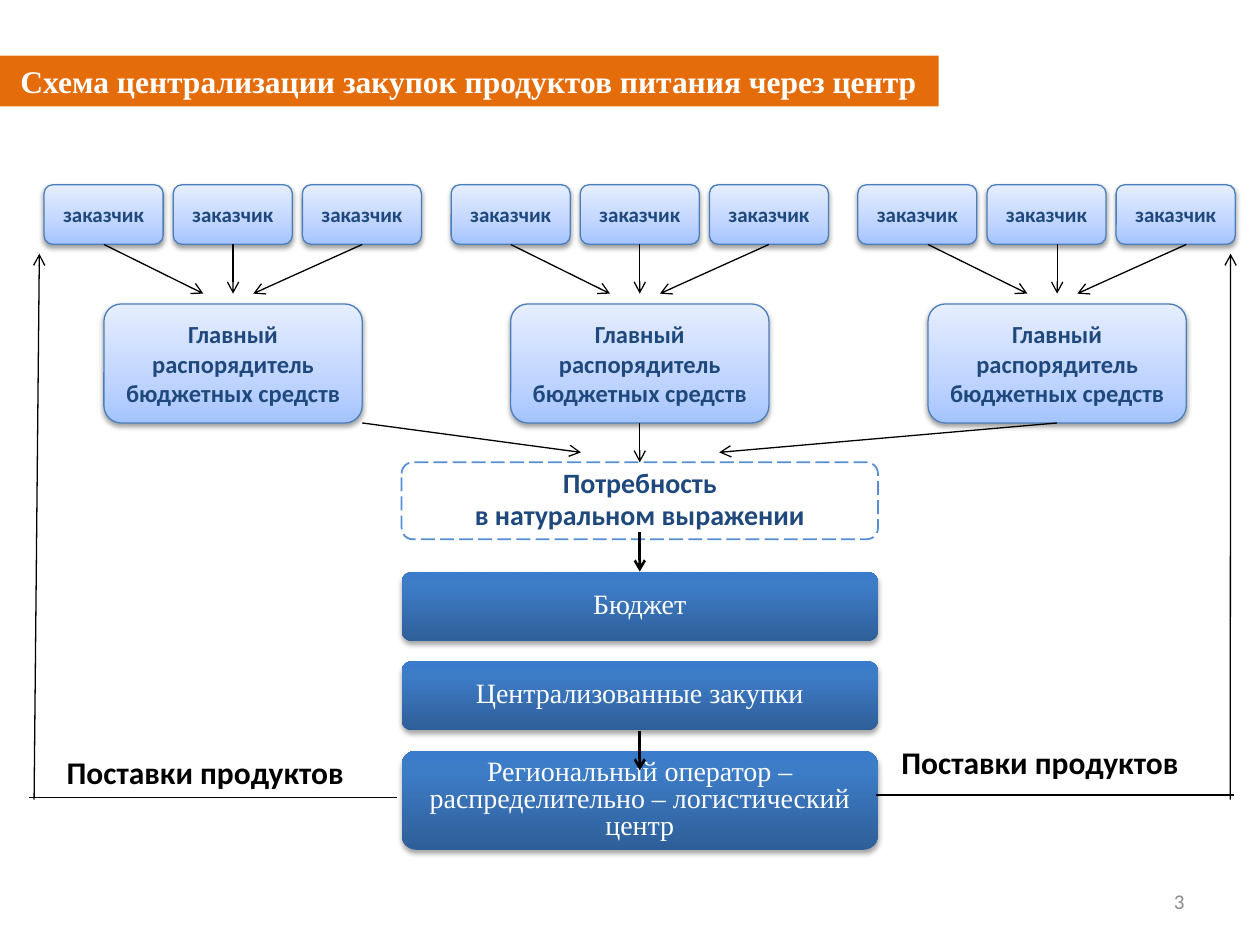
from lxml import etree
from pptx import Presentation
from pptx.dml.color import RGBColor
from pptx.enum.dml import MSO_LINE
from pptx.enum.shapes import MSO_CONNECTOR, MSO_SHAPE
from pptx.enum.text import MSO_ANCHOR, PP_ALIGN
from pptx.oxml import parse_xml
from pptx.oxml.ns import nsdecls, qn
from pptx.util import Pt

LINE, ROUND, RECT = MSO_CONNECTOR.STRAIGHT, MSO_SHAPE.ROUNDED_RECTANGLE, MSO_SHAPE.RECTANGLE
DASH = MSO_LINE.LONG_DASH
TOP, MIDDLE = MSO_ANCHOR.TOP, MSO_ANCHOR.MIDDLE
LEFT, CENTER, RIGHT = PP_ALIGN.LEFT, PP_ALIGN.CENTER, PP_ALIGN.RIGHT

COLORS = {
    "black": "000000", "white": "FFFFFF", "navy": "1F497D", "orange": "E46C0A",
    "edge": "4B7EBC", "dash": "558ED5", "gray": "8C8C8C",
}
# Stops run from the bottom edge to the top: (percent, colour)
PALE = [(0, "A4C4FF"), (35, "BFD4FF"), (100, "E6EEFF")]
DEEP = [(0, "2F5F99"), (80, "3D7CC7"), (100, "3A7CCB")]

SMALL = {"size": 12, "name": "Calibri", "bold": True, "color": "navy"}
BODY = {**SMALL, "size": 14}
NEED = {**SMALL, "size": 16}
STEP = {"size": 16, "name": "Times New Roman", "bold": False, "color": "white"}
LABEL = {**SMALL, "size": 18, "color": "black"}
TITLE = {**STEP, "size": 18, "bold": True}
NUMBER = {**SMALL, "bold": False, "color": "gray"}


class Board:
    """Current slide together with the shared drawing style."""

    def __init__(self, slide):
        self.shapes = slide.shapes

    def color(self, name):
        return RGBColor.from_string(COLORS[name])

    def put_text(self, shape, text, font, align=CENTER, anchor=MIDDLE, **para):
        frame = shape.text_frame
        frame.word_wrap, frame.vertical_anchor = True, anchor
        for i, words in enumerate(text.split("\n")):
            line = frame.paragraphs[0] if i == 0 else frame.add_paragraph()
            for key, value in {"alignment": align, **para}.items():
                setattr(line, key, value)
            run = line.add_run()
            run.text = words
            for key, value in font.items():
                if key == "color":
                    run.font.color.rgb = self.color(value)
                else:
                    setattr(run.font, key, Pt(value) if key == "size" else value)

    def label(self, place, text, font, **style):
        self.put_text(self.shapes.add_textbox(*map(Pt, place)), text, font, **style)

    def blend(self, shape, stops):
        shape.fill.gradient()
        marks = "".join(
            f'<a:gs pos="{at * 1000}"><a:srgbClr val="{tone}"/></a:gs>' for at, tone in stops
        )
        props = shape.element.spPr
        props.replace(props.find(qn("a:gradFill")), parse_xml(
            f'<a:gradFill {nsdecls("a")} rotWithShape="1"><a:gsLst>{marks}</a:gsLst>'
            '<a:lin ang="16200000" scaled="0"/></a:gradFill>'))

    def shade(self, shape, alpha, drop):
        shape.element.spPr.find(qn("a:effectLst")).append(parse_xml(
            f'<a:outerShdw {nsdecls("a")} blurRad="{Pt(3.1)}" dist="{Pt(drop)}" '
            'dir="5400000" rotWithShape="0"><a:srgbClr val="000000">'
            f'<a:alpha val="{alpha * 1000}"/></a:srgbClr></a:outerShdw>'))

    def box(self, place, kind=ROUND, fill=None, edge=None, width=0.75):
        shape = self.shapes.add_shape(kind, *map(Pt, place))
        shape.shadow.inherit = False
        if kind == ROUND:
            shape.adjustments[0] = 0.145
        if fill:
            shape.fill.solid()
            shape.fill.fore_color.rgb = self.color(fill)
        else:
            shape.fill.background()
        if edge:
            shape.line.color.rgb = self.color(edge)
            shape.line.width = Pt(width)
        else:
            shape.line.fill.background()
        return shape

    def card(self, place, text, font):
        shape = self.box(place, edge="edge")
        self.blend(shape, PALE)
        self.shade(shape, 38, 1.6)
        self.put_text(shape, text, font, space_before=Pt(font["size"] * 0.2))

    def step(self, place, text):
        shape = self.box(place)
        self.blend(shape, DEEP)
        self.shade(shape, 35, 1.8)
        self.put_text(shape, text, STEP, line_spacing=0.8, space_before=Pt(3.2))

    def line(self, start, end, width=0.75, arrow=True):
        link = self.shapes.add_connector(LINE, *map(Pt, (*start, *end)))
        link.line.color.rgb = self.color("black")
        link.line.width = Pt(width)
        props = link.element.spPr
        if arrow:
            etree.SubElement(props.find(qn("a:ln")), qn("a:tailEnd"), type="arrow")
        etree.SubElement(props, qn("a:effectLst"))


def main():
    deck = Presentation()
    deck.slide_width, deck.slide_height = Pt(720), Pt(540)
    board = Board(deck.slides.add_slide(deck.slide_layouts[6]))

    mid, gap = 365.6, 73.8
    small, large = 68, 2 * gap
    # Centre of each trio of customers and of the manager below it
    for trio, boss in [(133, 133.2), (mid, mid), (598, 604.1)]:
        board.card((boss - large / 2, 173.7, large, 68), "Главный распорядитель бюджетных средств", BODY)
        for side, tip in [(-1, -17), (0, 0), (1, 11.5)]:
            board.card((trio + side * gap - small / 2, 105.6, small, 34), "заказчик", SMALL)
            board.line((boss + side * gap, 139.7), (boss + tip, 167.8))

    left, wide = 229.5, 272.2
    need = board.box((left, 264.2, wide, 44), edge="dash", width=1)
    need.line.dash_style = DASH
    board.put_text(need, "Потребность\nв натуральном выражении", NEED, anchor=TOP,
                   line_spacing=0.8, space_before=Pt(3.2))
    for top, high, text in [
        (327, 39.4, "Бюджет"),
        (378, 39.4, "Централизованные закупки"),
        (429, 56.6, "Региональный оператор – распределительно – логистический центр"),
    ]:
        board.step((left, top, wide, high), text)

    for x, y in [(508, 423.5), (31, 429)]:
        board.label((x, y, 187, 22.3), "Поставки продуктов", LABEL,
                    align=LEFT, anchor=TOP, line_spacing=0.9)

    for start, end in [
        ((207, 241.7), (332, 258.5)),
        ((mid, 241.7), (mid, 264.2)),
        ((604.1, 241.7), (411, 258.5)),
        ((19.5, 457), (22.5, 145)),
        ((703, 457), (703.2, 145)),
    ]:
        board.line(start, end)
    for top in (304, 417.6):
        board.line((mid, top), (mid, top + 22.6), width=1.5)
    for start, end in [((16.8, 455.7), (227, 455.7)), ((500.5, 454.3), (705, 454.3))]:
        board.line(start, end, arrow=False)

    head = board.box((0, 31.8, 536.4, 29), kind=RECT, fill="orange")
    head.text_frame.margin_left, head.text_frame.margin_right = Pt(11.7), 0
    board.put_text(head, "Схема централизации закупок продуктов питания через центр", TITLE,
                   align=LEFT, anchor=TOP)
    board.label((516, 500.5, 168, 28.8), "3", NUMBER, align=RIGHT)

    deck.save("out.pptx")


if __name__ == "__main__":
    main()
